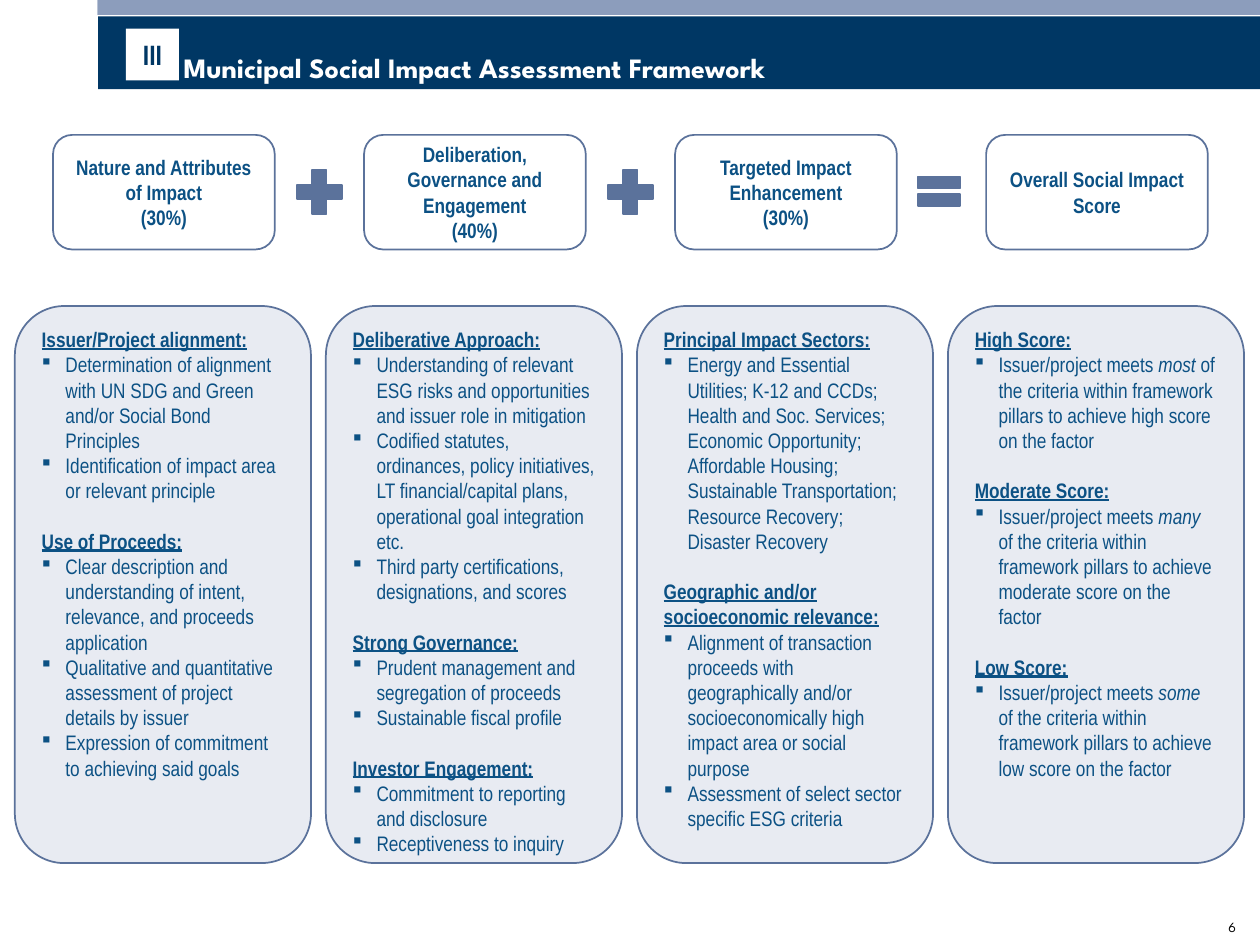
"""Build the Municipal Social Impact Assessment Framework slide."""
from lxml import etree
from pptx import Presentation
from pptx import util as u
from pptx.dml.color import RGBColor
from pptx.enum import shapes, text
from pptx.oxml.ns import qn

NAVY, BLUE, SLATE, PALE, WHITE = "003764", "0C5184", "5B729B", "E8EBF2", "FFFFFF"
NARROW, SPARTAN = "Arial Narrow", "League Spartan"
KIND = shapes.MSO_SHAPE
PITCH = 6.27


def add_box(kind, left, top, width, height, fill=None, line=None):
    box = page.shapes.add_shape(kind, u.Cm(left), u.Cm(top), u.Cm(width), u.Cm(height))
    box.shadow.inherit = False
    for part, colour in ((box.fill, fill), (box.line.fill, line)):
        if colour:
            part.solid()
            part.fore_color.rgb = RGBColor.from_string(colour)
        else:
            part.background()
    if line:
        box.line.width = u.Pt(1)
    box.text_frame.word_wrap = True
    return box


def style(para, size, face, colour, bold=False, align=text.PP_ALIGN.LEFT):
    para.alignment = align
    font = para.font
    font.size, font.name, font.bold = u.Pt(size), face, bold
    font.color.rgb = RGBColor.from_string(colour)


cards = [
    "Nature and Attributes of Impact\n(30%)",
    "Deliberation, Governance and Engagement\n(40%)",
    "Targeted Impact Enhancement\n(30%)",
    "Overall Social Impact Score",
]
signs = [
    (KIND.MATH_PLUS, 3.26, 1.24, 1.22),
    (KIND.MATH_PLUS, 3.26, 1.24, 1.22),
    (KIND.MATH_EQUAL, 3.35, 1.14, 1.02),
]
columns = [
    [
        ("Issuer/Project alignment:", [
            "Determination of alignment with UN SDG and Green and/or Social Bond Principles",
            "Identification of impact area or relevant principle"]),
        ("Use of Proceeds:", [
            "Clear description and understanding of intent, relevance, and proceeds application",
            "Qualitative and quantitative assessment of project details by issuer",
            "Expression of commitment to achieving said goals"]),
    ],
    [
        ("Deliberative Approach:", [
            "Understanding of relevant ESG risks and opportunities and issuer role in mitigation",
            "Codified statutes, ordinances, policy initiatives, LT financial/capital plans, "
            "operational goal integration etc.",
            "Third party certifications, designations, and scores"]),
        ("Strong Governance:", [
            "Prudent management and segregation of proceeds",
            "Sustainable fiscal profile"]),
        ("Investor Engagement:", [
            "Commitment to reporting and disclosure",
            "Receptiveness to inquiry"]),
    ],
    [
        ("Principal Impact Sectors:", [
            "Energy and Essential Utilities; K-12 and CCDs; Health and Soc. Services; "
            "Economic Opportunity; Affordable Housing; Sustainable Transportation; "
            "Resource Recovery; Disaster Recovery"]),
        ("Geographic and/or socioeconomic relevance:", [
            "Alignment of transaction proceeds with geographically and/or "
            "socioeconomically high impact area or social purpose",
            "Assessment of select sector specific ESG criteria"]),
    ],
    [
        (f"{level} Score:", [
            f"Issuer/project meets *{amount}* of the criteria within framework pillars "
            f"to achieve {level.lower()} score on the factor"])
        for level, amount in (("High", "most"), ("Moderate", "many"), ("Low", "some"))
    ],
]

deck = Presentation()
deck.slide_width, deck.slide_height = u.Cm(25.4), u.Cm(19.05)
page = deck.slides.add_slide(deck.slide_layouts[5])

title = page.shapes.title
title.left, title.top, title.width, title.height = u.Cm(1.98), u.Cm(0.33), u.Cm(23.42), u.Cm(1.47)
title.fill.solid()
title.fill.fore_color.rgb = RGBColor.from_string(NAVY)
frame = title.text_frame
frame.text = "Municipal Social Impact Assessment Framework"
frame.auto_size = text.MSO_AUTO_SIZE.NONE
frame.vertical_anchor = text.MSO_ANCHOR.BOTTOM
frame.margin_left = u.Cm(1.72)
frame.margin_top = frame.margin_right = frame.margin_bottom = u.Cm(0.1)
style(frame.paragraphs[0], 16, SPARTAN, WHITE, True)

add_box(KIND.RECTANGLE, 1.96, 0, 23.44, 0.3, "BAC4D7")
add_box(KIND.RECTANGLE, 1.98, 0, 23.42, 0.3, "8C9DBC")

badge = add_box(KIND.RECTANGLE, 2.54, 0.58, 1.07, 1.04, WHITE)
badge.text_frame.text = "III"
badge.text_frame.margin_top = badge.text_frame.margin_bottom = u.Cm(0.1)
style(badge.text_frame.paragraphs[0], 16, NARROW, NAVY, True, text.PP_ALIGN.CENTER)

for index, label in enumerate(cards):
    card = add_box(KIND.ROUNDED_RECTANGLE, 1.07 + index * PITCH, 2.72, 4.47, 2.31, None, SLATE)
    card.text_frame.text = label
    for para in card.text_frame.paragraphs:
        style(para, 12, NARROW, BLUE, True, text.PP_ALIGN.CENTER)

for index, (kind, top, width, height) in enumerate(signs):
    add_box(kind, 5.82 + index * PITCH, top, width, height, SLATE, SLATE)

for index, sections in enumerate(columns):
    panel = add_box(KIND.ROUNDED_RECTANGLE, 0.3 + index * PITCH, 6.17, 5.97, 11.23, PALE, SLATE)
    frame = panel.text_frame
    frame.vertical_anchor = text.MSO_ANCHOR.TOP
    for order, (heading, bullets) in enumerate(sections):
        para = frame.add_paragraph() if order else frame.paragraphs[0]
        para.text = heading
        style(para, 12, NARROW, BLUE, True)
        para.runs[0].font.underline = True
        if order:
            para.space_before = u.Pt(14.4)
        for bullet in bullets:
            para = frame.add_paragraph()
            props = para._p.get_or_add_pPr()
            props.set("marL", str(u.Cm(0.48)))
            props.set("indent", str(u.Cm(-0.48)))
            etree.SubElement(props, qn("a:buFont"), typeface="Wingdings")
            etree.SubElement(props, qn("a:buChar"), char="§")
            style(para, 12, NARROW, BLUE)
            for position, piece in enumerate(bullet.split("*")):
                span = para.add_run()
                span.text = piece
                span.font.italic = position % 2 == 1

number = page.shapes.add_textbox(u.Cm(24.03), u.Cm(18.34), u.Cm(1.14), u.Cm(0.71))
number.text_frame.text = "6"
number.text_frame.word_wrap = True
number.text_frame.vertical_anchor = text.MSO_ANCHOR.MIDDLE
style(number.text_frame.paragraphs[0], 8, SPARTAN, "000000", align=text.PP_ALIGN.RIGHT)

deck.save("out.pptx")
